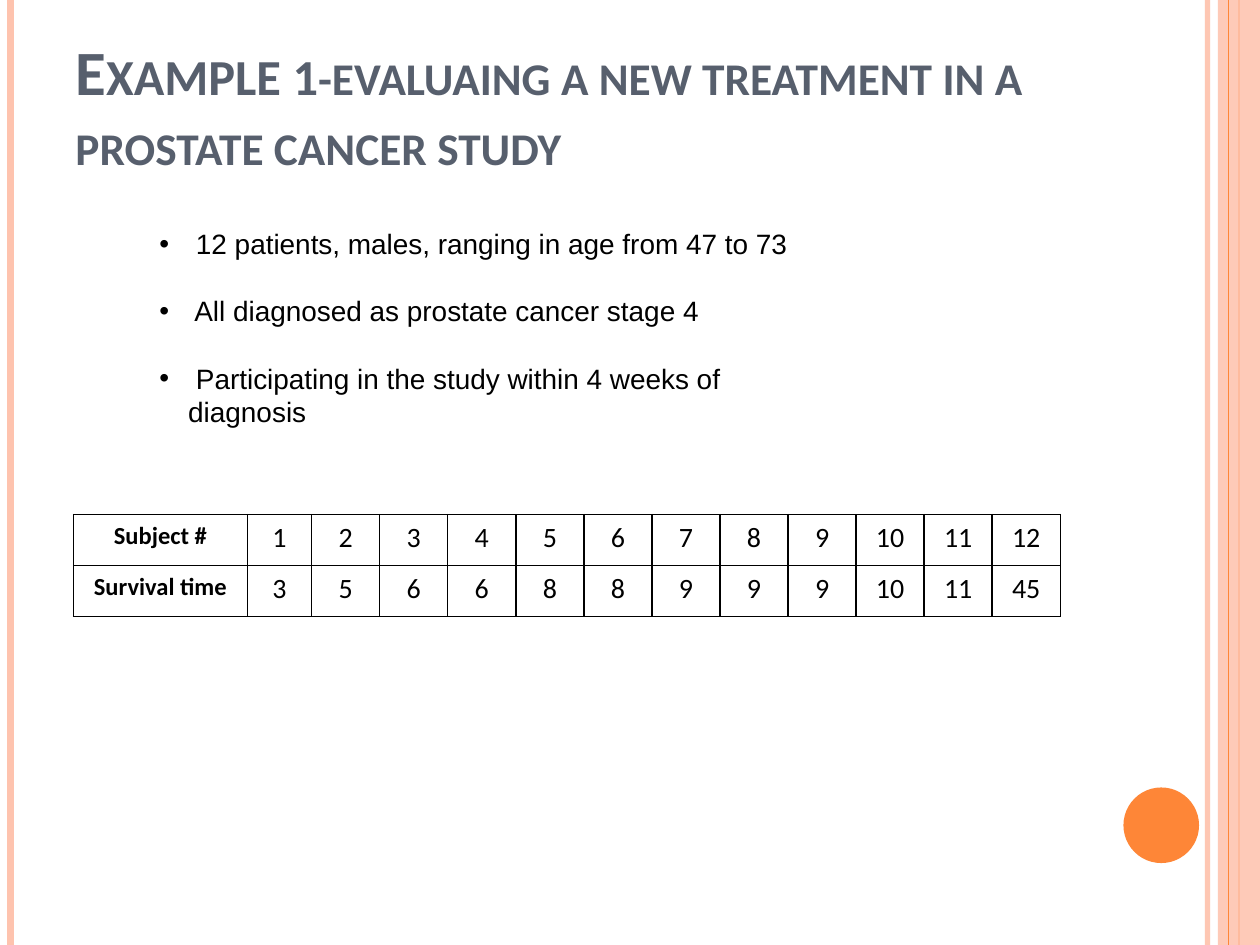
from lxml.etree import SubElement
from pptx import Presentation
from pptx.dml.color import RGBColor
from pptx.enum.shapes import MSO_CONNECTOR, MSO_SHAPE
from pptx.enum.text import MSO_ANCHOR, PP_ALIGN
from pptx.oxml.ns import qn
from pptx.util import Pt

PEACH = RGBColor(0xFE, 0xC3, 0xAE)
ORANGE = RGBColor(0xFE, 0x86, 0x37)
SLATE = RGBColor(0x57, 0x5F, 0x6D)
BLACK = RGBColor(0, 0, 0)
HEIGHT = 540

presentation = Presentation()
presentation.slide_width = Pt(720)
presentation.slide_height = Pt(HEIGHT)
slide = presentation.slides.add_slide(presentation.slide_layouts[6])


def set_alpha(properties, percent):
    color = properties.find(".//" + qn("a:srgbClr"))
    SubElement(color, qn("a:alpha"), val=str(percent * 1000))


def format_run(run, size, font, color=BLACK, bold=False):
    run.font.size = Pt(size)
    run.font.name = font
    run.font.color.rgb = color
    run.font.bold = bold


# Side decoration, from back to front: the band covers the first three lines
for x, width, color, opacity in [(690, 3, PEACH, 93), (6, 4.5, PEACH, 100),
                                 (708, 1.5, ORANGE, 100), (None, 0, PEACH, 87),
                                 (702, 0.75, ORANGE, 100)]:
    if x is None:
        band = slide.shapes.add_shape(MSO_SHAPE.RECTANGLE, Pt(696), 0, Pt(24), Pt(HEIGHT))
        band.shadow.inherit = False
        band.fill.solid()
        band.fill.fore_color.rgb = color
        band.line.fill.background()
        properties = band._element.spPr
    else:
        line = slide.shapes.add_connector(MSO_CONNECTOR.STRAIGHT, Pt(x), 0, Pt(x), Pt(HEIGHT))
        line.line.color.rgb = color
        line.line.width = Pt(width)
        properties = line._element.spPr
        SubElement(properties, qn("a:effectLst"))
    if opacity < 100:
        set_alpha(properties, opacity)

circle = slide.shapes.add_shape(MSO_SHAPE.OVAL, Pt(642), Pt(450), Pt(43.2), Pt(43.2))
circle.shadow.inherit = False
circle.fill.solid()
circle.fill.fore_color.rgb = ORANGE
circle.line.fill.background()

# Title in small capitals
title = slide.shapes.add_textbox(Pt(36), Pt(14.4), Pt(588), Pt(90))
title.text_frame.word_wrap = True
title.text_frame.vertical_anchor = MSO_ANCHOR.BOTTOM
paragraph = title.text_frame.paragraphs[0]
for text, size in [("Example 1", 36),
                   ("-evaluaing a new treatment in a prostate cancer study", 32.4)]:
    run = paragraph.add_run()
    run.text = text
    format_run(run, size, "Calibri", SLATE, bold=True)
    run.font._element.set("cap", "small")

# Bulleted study facts
facts = slide.shapes.add_textbox(Pt(84), Pt(126), Pt(401), Pt(104.4))
text_frame = facts.text_frame
text_frame.word_wrap = True
text_frame.text = "\n".join([
    " 12 patients, males, ranging in age from 47 to 73",
    " All diagnosed as prostate cancer stage 4",
    " Participating in the study within 4 weeks of diagnosis",
])
for paragraph in text_frame.paragraphs:
    paragraph.line_spacing = Pt(19.2)
    paragraph.space_after = Pt(19.2)
    format_run(paragraph.runs[0], 16, "Arial")
    properties = paragraph._p.get_or_add_pPr()
    properties.set("marL", str(Pt(16.5)))
    properties.set("indent", str(-Pt(16.5)))
    SubElement(properties, qn("a:buFont"), typeface="Arial")
    SubElement(properties, qn("a:buChar"), char="•")

# Survival table
rows = [
    ["Subject #", *range(1, 13)],
    ["Survival time", 3, 5, 6, 6, 8, 8, 9, 9, 9, 10, 11, 45],
]
column_widths = [99.4, 36.7] + [38.9] * 11
row_height = 29.2
table = slide.shapes.add_table(len(rows), len(column_widths), Pt(42), Pt(294),
                               Pt(sum(column_widths)), Pt(row_height * len(rows))).table
table.first_row = False
table.horz_banding = False
for column, width in zip(table.columns, column_widths):
    column.width = Pt(width)
for row, values in zip(table.rows, rows):
    row.height = Pt(row_height)
    for index, (cell, value) in enumerate(zip(row.cells, values)):
        is_label = index == 0
        cell.text_frame.text = str(value)
        paragraph = cell.text_frame.paragraphs[0]
        paragraph.alignment = PP_ALIGN.CENTER
        format_run(paragraph.runs[0], 14 if is_label else 16, "Calibri", bold=is_label)
        properties = cell._tc.get_or_add_tcPr()
        for side in ("a:lnL", "a:lnR", "a:lnT", "a:lnB"):
            border = SubElement(properties, qn(side), w=str(Pt(1)))
            fill = SubElement(border, qn("a:solidFill"))
            SubElement(fill, qn("a:srgbClr"), val=str(BLACK))
        cell.fill.background()

presentation.save("out.pptx")
